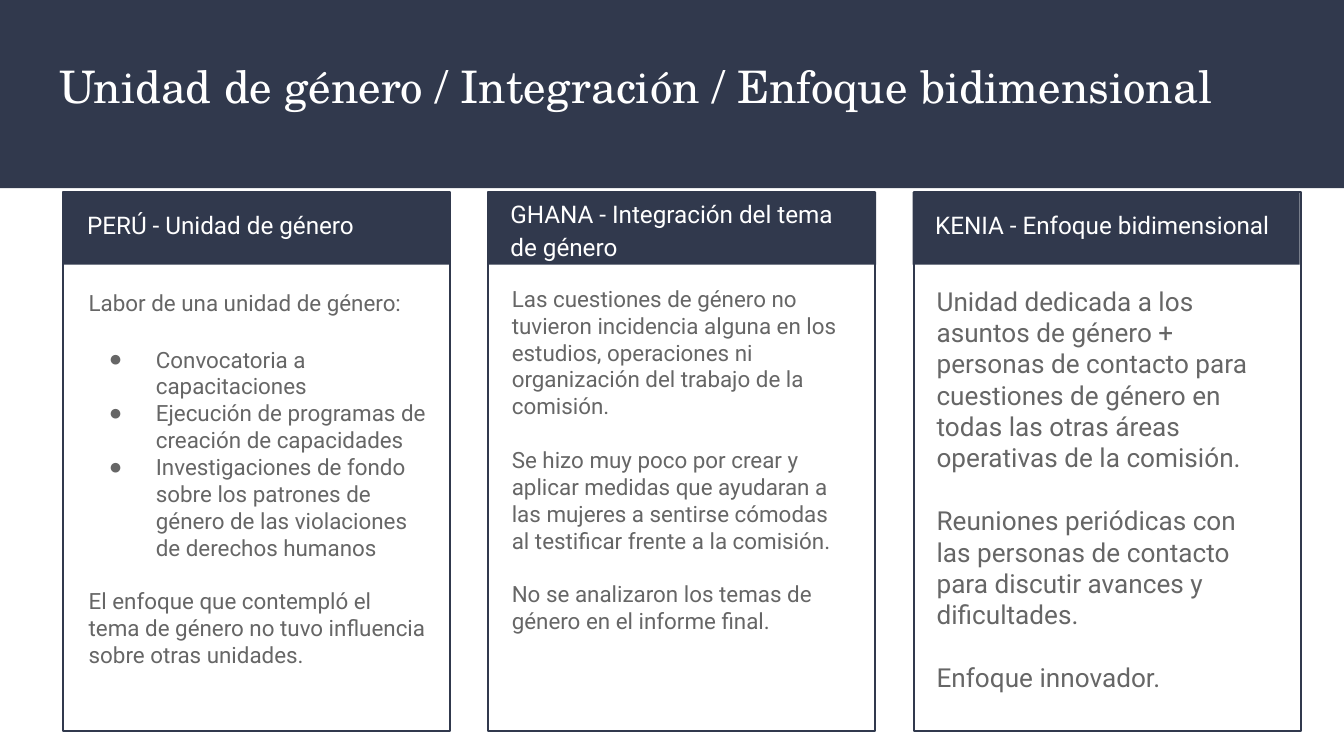
from dataclasses import dataclass

from lxml.etree import SubElement
from pptx import Presentation
from pptx.dml.color import RGBColor
from pptx.enum.shapes import MSO_SHAPE
from pptx.enum.text import MSO_ANCHOR, MSO_AUTO_SIZE, PP_ALIGN
from pptx.oxml.ns import qn
from pptx.util import Inches, Pt

NAVY, GREY, WHITE = "31394D", "666666", "FFFFFF"
CARD_TOP, CARD_WIDTH, CARD_HEIGHT, BAND_HEIGHT = 1.43, 2.88, 4.01, 0.54


@dataclass
class Entry:
    text: str
    space_before: float = 0
    bullet: bool = False
    line_spacing: float = 1.0


@dataclass
class Card:
    band_left: float
    frame_left: float
    heading_left: float
    heading: str
    size: float
    entries: list[Entry]
    heading_top: float = CARD_TOP
    heading_width: float = 2.73
    heading_height: float = 0.5


CARDS = [
    Card(0.47, 0.47, 0.55, "PERÚ - Unidad de género", 12, [
        Entry("Labor de una unidad de género:", line_spacing=1.15),
        Entry("Convocatoria a capacitaciones", 16, bullet=True),
        Entry("Ejecución de programas de creación de capacidades", bullet=True),
        Entry("Investigaciones de fondo sobre los patrones de género de las "
              "violaciones de derechos humanos", bullet=True),
        Entry("El enfoque que contempló el tema de género no tuvo influencia "
              "sobre otras unidades.", 14.4),
    ]),
    Card(3.64, 3.63, 3.7, "GHANA - Integración del tema de género", 12, [
        Entry("Las cuestiones de género no tuvieron incidencia alguna en los estudios, "
              "operaciones ni organización del trabajo de la comisión."),
        Entry("Se hizo muy poco por crear y aplicar medidas que ayudaran a las mujeres "
              "a sentirse cómodas al testificar frente a la comisión.", 14.4),
        Entry("No se analizaron los temas de género en el informe final.", 14.4),
    ], heading_top=1.35, heading_width=2.8, heading_height=0.6),
    Card(6.79, 6.8, 6.86, "KENIA - Enfoque bidimensional", 14, [
        Entry("Unidad dedicada a los asuntos de género + personas de contacto para "
              "cuestiones de género en todas las otras áreas operativas de la comisión."),
        Entry("Reuniones periódicas con las personas de contacto para discutir "
              "avances y dificultades.", 16.8),
        Entry("Enfoque innovador.", 16.8),
    ]),
]


def color(value: str) -> RGBColor:
    return RGBColor.from_string(value)


def place(shape, left: float, top: float, width: float, height: float) -> None:
    shape.left, shape.top = Inches(left), Inches(top)
    shape.width, shape.height = Inches(width), Inches(height)


def add_rectangle(slide, left: float, top: float, width: float, height: float,
                  fill: str | None = None, line: str | None = None):
    shape = slide.shapes.add_shape(MSO_SHAPE.RECTANGLE, Inches(left), Inches(top),
                                   Inches(width), Inches(height))
    shape.shadow.inherit = False
    if fill:
        shape.fill.solid()
        shape.fill.fore_color.rgb = color(fill)
    else:
        shape.fill.background()
    if line:
        shape.line.color.rgb = color(line)
        shape.line.width = Pt(0.75)
    else:
        shape.line.fill.background()
    return shape


def set_bullet(paragraph, bullet: bool) -> None:
    properties = paragraph._p.get_or_add_pPr()
    properties.set("marL", str(Inches(0.5) if bullet else 0))
    properties.set("indent", str(Inches(-0.35) if bullet else 0))
    if bullet:
        bullet_color = SubElement(properties, qn("a:buClr"))
        SubElement(bullet_color, qn("a:srgbClr"), val=GREY)
        SubElement(properties, qn("a:buFont"), typeface="Arial")
        SubElement(properties, qn("a:buChar"), char="●")
    else:
        SubElement(properties, qn("a:buNone"))


def write_entries(shape, entries: list[Entry], size: float, text_color: str,
                  font_name: str = "Roboto") -> None:
    frame = shape.text_frame
    frame.word_wrap = True
    frame.auto_size = MSO_AUTO_SIZE.NONE
    frame.vertical_anchor = MSO_ANCHOR.TOP
    frame.margin_left = frame.margin_right = Inches(0.1)
    frame.margin_top = frame.margin_bottom = Inches(0.1)
    for index, entry in enumerate(entries):
        paragraph = frame.add_paragraph() if index else frame.paragraphs[0]
        paragraph.text = entry.text
        set_bullet(paragraph, entry.bullet)
        paragraph.alignment = PP_ALIGN.LEFT
        paragraph.space_before = Pt(entry.space_before)
        paragraph.line_spacing = entry.line_spacing
        paragraph.font.name = font_name
        paragraph.font.size = Pt(size)
        paragraph.font.color.rgb = color(text_color)


def add_text_box(slide):
    return slide.shapes.add_textbox(0, 0, 0, 0)


def draw_card(slide, card: Card, body) -> None:
    add_rectangle(slide, card.band_left, CARD_TOP, CARD_WIDTH, BAND_HEIGHT, fill=NAVY)
    add_rectangle(slide, card.frame_left, CARD_TOP, CARD_WIDTH, CARD_HEIGHT, line=NAVY)
    heading = add_text_box(slide)
    place(heading, card.heading_left, card.heading_top, card.heading_width,
          card.heading_height)
    write_entries(heading, [Entry(card.heading, line_spacing=1.15)], 13, WHITE)
    place(body, card.heading_left + 0.01, 2.02, 2.71, 3.06)
    write_entries(body, card.entries, card.size, GREY)


def main() -> None:
    presentation = Presentation()
    presentation.slide_width = Inches(10)
    presentation.slide_height = presentation.slide_width * 9 // 16
    slide = presentation.slides.add_slide(presentation.slide_layouts[1])
    title, list_body = slide.shapes.title, slide.placeholders[1]

    banner = add_rectangle(slide, 0, 0, 10, 1.4, fill=NAVY)
    title._element.addprevious(banner._element)
    place(title, 0.34, 0.34, 9.57, 0.68)
    write_entries(title, [Entry("Unidad de género / Integración / Enfoque bidimensional")],
                  24, WHITE, "TeX Gyre Schola")

    for index, card in enumerate(CARDS):
        draw_card(slide, card, add_text_box(slide) if index else list_body)
    presentation.save("out.pptx")


if __name__ == "__main__":
    main()
